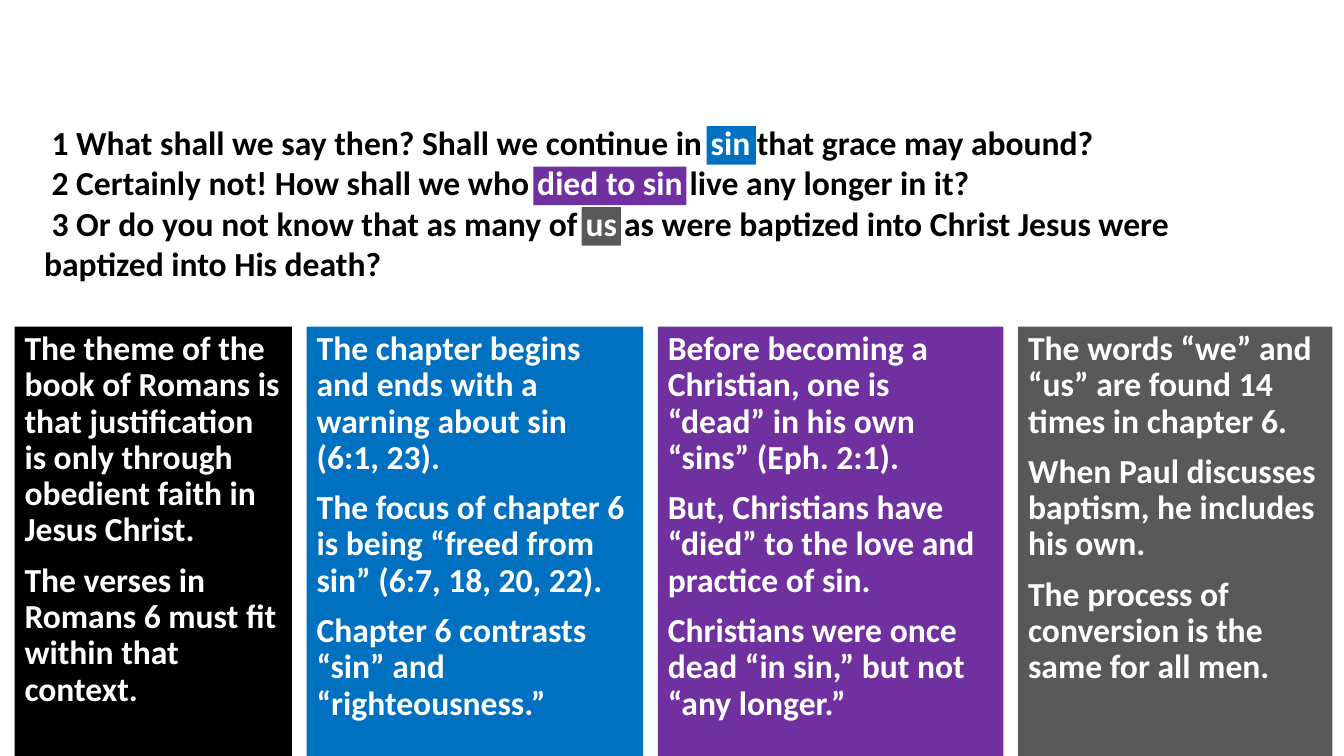
from dataclasses import dataclass

import pptx
import pptx.dml.color
import pptx.enum.shapes
import pptx.enum.text
import pptx.util

Cm = pptx.util.Cm
Pt = pptx.util.Pt


@dataclass(frozen=True)
class Theme:
    font: str = "Calibri"
    size: int = 24
    black: str = "000000"
    white: str = "FFFFFF"
    blue: str = "0070C0"
    purple: str = "7030A0"
    gray: str = "595959"


@dataclass(frozen=True)
class Panel:
    width: float
    fill: str
    notes: tuple[str, ...]


@dataclass(frozen=True)
class Tag:
    left: float
    width: float
    fill: str
    word: str


THEME = Theme()
WIDTH, HEIGHT = 33.87, 19.05
GAP = 0.37
PANEL_TOP = 8.23
TAG_TOP, TAG_STEP, TAG_HEIGHT = 3.18, 1.02, 0.97

VERSES = (
    " 1 What shall we say then? Shall we continue in sin that grace may abound?",
    " 2 Certainly not! How shall we who died to sin live any longer in it?",
    " 3 Or do you not know that as many of us as were baptized into Christ Jesus "
    "were baptized into His death?",
)

PANELS = (
    Panel(6.99, THEME.black, (
        "The theme of the book of Romans is that justification is only through "
        "obedient faith in Jesus Christ.",
        "The verses in Romans 6 must fit within that context.",
    )),
    Panel(8.48, THEME.blue, (
        "The chapter begins and ends with a warning about sin (6:1, 23).",
        "The focus of chapter 6 is being “freed from sin” (6:7, 18, 20, 22).",
        "Chapter 6 contrasts “sin” and “righteousness.”",
    )),
    Panel(8.71, THEME.purple, (
        "Before becoming a Christian, one is “dead” in his own “sins” (Eph. 2:1).",
        "But, Christians have “died” to the love and practice of sin.",
        "Christians were once dead “in sin,” but not “any longer.”",
    )),
    Panel(7.92, THEME.gray, (
        "The words “we” and “us” are found 14 times in chapter 6.",
        "When Paul discusses baptism, he includes his own.",
        "The process of conversion is the same for all men.",
    )),
)

TAGS = (
    Tag(17.81, 1.24, THEME.blue, "sin"),
    Tag(13.44, 3.86, THEME.purple, "died to sin"),
    Tag(14.66, 0.99, THEME.gray, "us"),
)


def write(frame, lines: tuple[str, ...], color: str,
          spacing: float = 1.0, before: float = 0) -> None:
    frame.word_wrap = True
    frame.vertical_anchor = pptx.enum.text.MSO_ANCHOR.TOP
    for row, line in enumerate(lines):
        para = frame.add_paragraph() if row else frame.paragraphs[0]
        para.alignment = pptx.enum.text.PP_ALIGN.LEFT
        para.line_spacing = spacing
        para.space_before = Pt(before if row else 0)
        run = para.add_run()
        run.text = line
        run.font.name = THEME.font
        run.font.size = Pt(THEME.size)
        run.font.bold = True
        run.font.color.rgb = pptx.dml.color.RGBColor.from_string(color)


def block(slide, left: float, top: float, width: float, height: float, fill: str):
    shape = slide.shapes.add_shape(
        pptx.enum.shapes.MSO_SHAPE.RECTANGLE,
        Cm(left), Cm(top), Cm(width), Cm(height))
    shape.shadow.inherit = False
    shape.fill.solid()
    shape.fill.fore_color.rgb = pptx.dml.color.RGBColor.from_string(fill)
    shape.line.fill.background()
    return shape.text_frame


def draw_verses(slide) -> None:
    box = slide.shapes.add_textbox(Cm(0.86), Cm(2.95), Cm(31.93), Cm(4.37))
    write(box.text_frame, VERSES, THEME.black)


def draw_panels(slide) -> None:
    left = GAP
    for panel in PANELS:
        frame = block(slide, left, PANEL_TOP, panel.width,
                      HEIGHT - PANEL_TOP, panel.fill)
        write(frame, panel.notes, THEME.white, 0.9, 10)
        left += panel.width + GAP


def draw_tags(slide) -> None:
    for row, tag in enumerate(TAGS):
        frame = block(slide, tag.left, TAG_TOP + row * TAG_STEP,
                      tag.width, TAG_HEIGHT, tag.fill)
        frame.margin_left = Cm(0.1)
        frame.margin_top = frame.margin_right = frame.margin_bottom = 0
        write(frame, (tag.word,), THEME.white, 0.9)


def main() -> None:
    deck = pptx.Presentation()
    deck.slide_width, deck.slide_height = Cm(WIDTH), Cm(HEIGHT)
    slide = deck.slides.add_slide(deck.slide_layouts[6])
    draw_verses(slide)
    draw_panels(slide)
    draw_tags(slide)
    deck.save("out.pptx")


if __name__ == "__main__":
    main()
